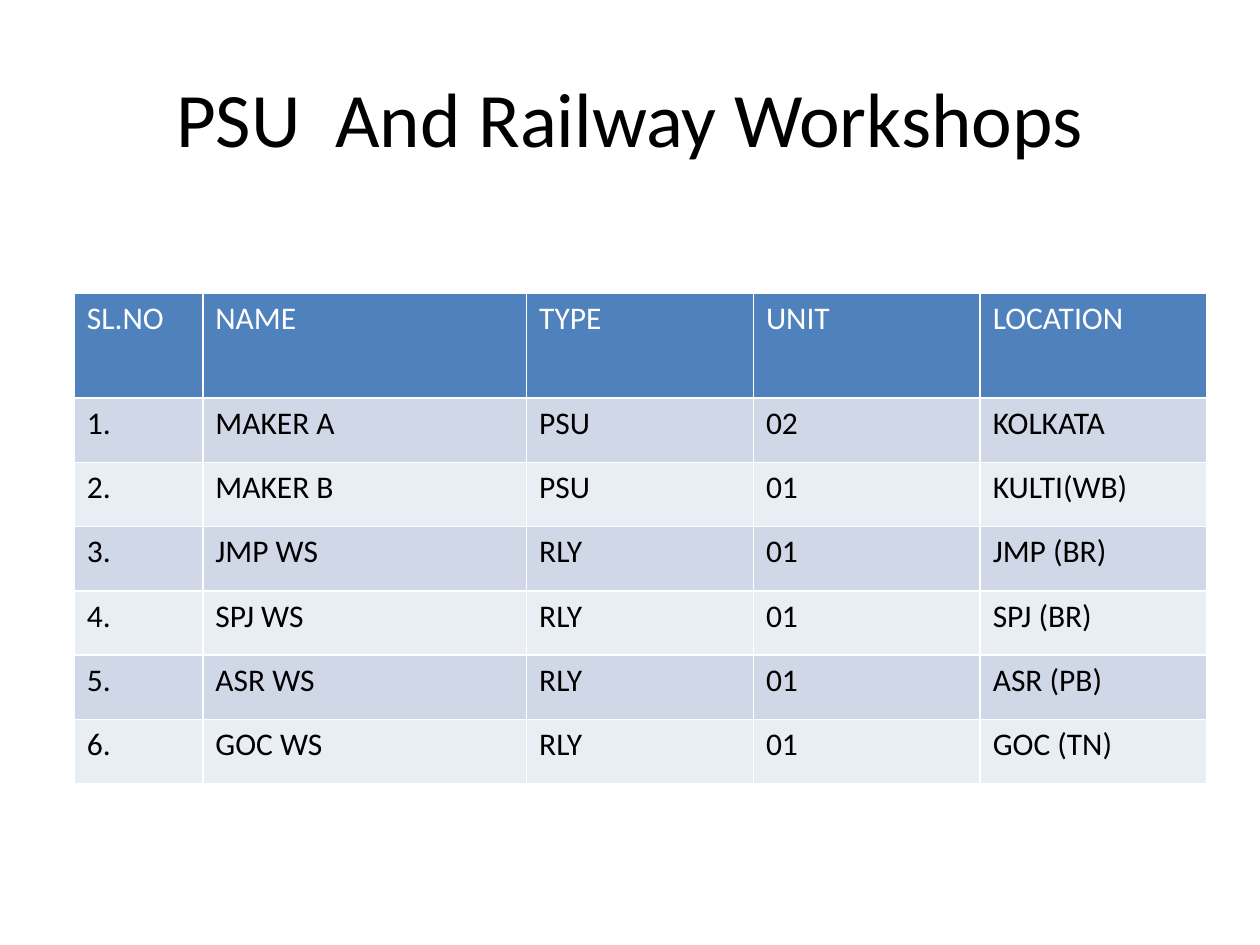
from lxml.etree import SubElement
from pptx import Presentation
from pptx.dml.color import RGBColor as Color
from pptx.enum.text import MSO_ANCHOR as Anchor, PP_ALIGN as Align
from pptx.oxml.ns import qn
from pptx.util import Inches, Pt

TITLE = "PSU  And Railway Workshops"
HEADER = ["SL.NO", "NAME", "TYPE", "UNIT", "LOCATION"]
WORKSHOPS = [
    ("MAKER A", "PSU", "02", "KOLKATA"),
    ("MAKER B", "PSU", "01", "KULTI(WB)"),
    ("JMP WS", "RLY", "01", "JMP (BR)"),
    ("SPJ WS", "RLY", "01", "SPJ (BR)"),
    ("ASR WS", "RLY", "01", "ASR (PB)"),
    ("GOC WS", "RLY", "01", "GOC (TN)"),
]
COLUMN_WIDTHS = [1.02, 2.57, 1.8, 1.8, 1.8]
HEADER_HEIGHT, ROW_HEIGHT = 0.83, 0.51

THEME = {
    "font": "Calibri",
    "title_size": 44,
    "table_size": 18,
    "text": "000000",
    "header_text": "FFFFFF",
    "header_fill": "4F81BD",
    "bands": ["D0D8E8", "E9EDF4"],
    "border": "FFFFFF",
    "border_width": 1,
}


def write(frame, text, size, color, align=Align.LEFT):
    paragraph = frame.paragraphs[0]
    paragraph.text = text
    paragraph.alignment = align
    font = paragraph.runs[0].font
    formats = {"name": THEME["font"], "size": Pt(size), "bold": False}
    for name, value in formats.items():
        setattr(font, name, value)
    font.color.rgb = Color.from_string(color)


def add_borders(cell):
    properties = cell._tc.get_or_add_tcPr()
    for side in ("a:lnL", "a:lnR", "a:lnT", "a:lnB"):
        line = SubElement(properties, qn(side), w=str(Pt(THEME["border_width"])))
        fill = SubElement(line, qn("a:solidFill"))
        SubElement(fill, qn("a:srgbClr"), val=THEME["border"])


def add_title(slide):
    box = slide.shapes.add_textbox(Inches(0.5), Inches(0.3), Inches(9), Inches(1.25))
    frame = box.text_frame
    frame.word_wrap = True
    frame.vertical_anchor = Anchor.MIDDLE
    write(frame, TITLE, THEME["title_size"], THEME["text"], Align.CENTER)


def add_workshop_table(slide):
    rows = [HEADER] + [(f"{number}.", *workshop) for number, workshop in enumerate(WORKSHOPS, 1)]
    heights = [HEADER_HEIGHT] + [ROW_HEIGHT] * len(WORKSHOPS)
    table = slide.shapes.add_table(
        len(rows), len(HEADER), Inches(0.59), Inches(2.33),
        Inches(sum(COLUMN_WIDTHS)), Inches(sum(heights)),
    ).table
    for column, width in zip(table.columns, COLUMN_WIDTHS):
        column.width = Inches(width)
    for index, (texts, height) in enumerate(zip(rows, heights)):
        table.rows[index].height = Inches(height)
        is_header = index == 0
        fill = THEME["header_fill"] if is_header else THEME["bands"][(index - 1) % 2]
        color = THEME["header_text"] if is_header else THEME["text"]
        for cell, text in zip(table.rows[index].cells, texts):
            add_borders(cell)
            cell.fill.solid()
            cell.fill.fore_color.rgb = Color.from_string(fill)
            write(cell.text_frame, text, THEME["table_size"], color)


def main():
    presentation = Presentation()
    presentation.slide_width = Inches(10)
    presentation.slide_height = Inches(7.5)
    slide = presentation.slides.add_slide(presentation.slide_layouts[6])
    add_title(slide)
    add_workshop_table(slide)
    presentation.save("out.pptx")


if __name__ == "__main__":
    main()
